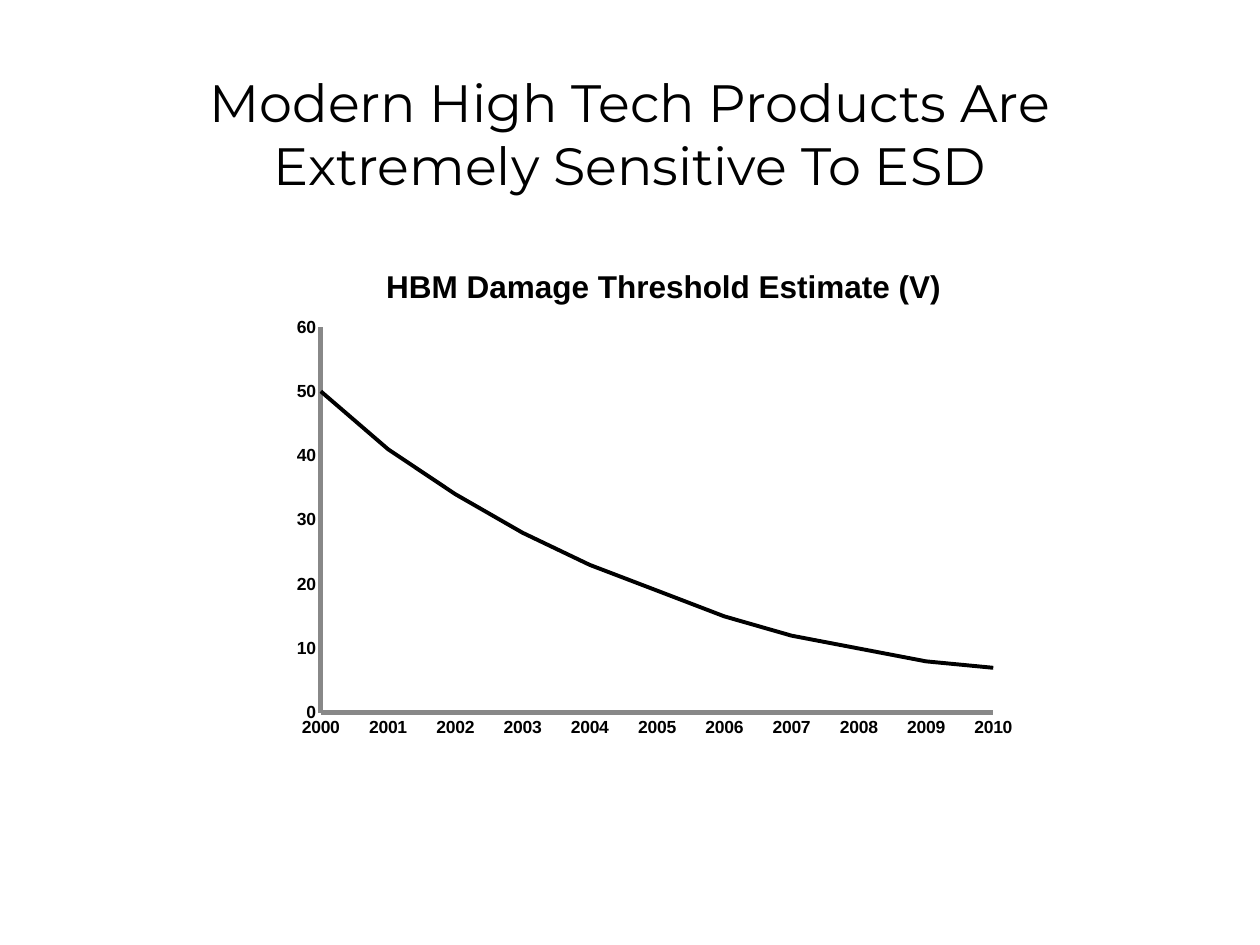
from lxml.etree import fromstring
from pptx import Presentation
from pptx.chart.data import XyChartData
from pptx.dml.color import RGBColor
from pptx.enum.chart import XL_CHART_TYPE, XL_MARKER_STYLE, XL_TICK_MARK
from pptx.enum.text import MSO_ANCHOR, PP_ALIGN
from pptx.util import Pt

HUES = {"ink": "000000", "axis": "888888"}
FACES = {"head": "Montserrat", "chart": "Arial"}
SPACE = "http://schemas.openxmlformats.org/drawingml/2006/chart"


def hue(name):
    return RGBColor.from_string(HUES[name])


def style(font, size, face, bold=False, color="ink"):
    font.size, font.name, font.bold = Pt(size), FACES[face], bold
    font.color.rgb = hue(color)


def write(frame, text, size=18, face="chart", bold=False, align=PP_ALIGN.CENTER):
    para = frame.paragraphs[0]
    para.alignment = align
    run = para.add_run()
    run.text = text
    style(run.font, size, face, bold)


def layout(inner=False, **parts):
    """Make a manual chart layout from fractions of the chart area."""
    tags = '<c:layoutTarget val="inner"/>' if inner else ""
    tags += '<c:xMode val="edge"/><c:yMode val="edge"/>'
    tags += "".join(f'<c:{key} val="{val}"/>' for key, val in parts.items())
    return fromstring(f'<c:layout xmlns:c="{SPACE}"><c:manualLayout>{tags}'
                      "</c:manualLayout></c:layout>")


def place(node, new, spot):
    for old in node.findall(f"{{{SPACE}}}layout"):
        node.remove(old)
    node.insert(spot, new)


class Deck:
    def __init__(self, wide, high):
        self.show = Presentation()
        self.show.slide_width, self.show.slide_height = Pt(wide), Pt(high)
        self.slide = self.show.slides.add_slide(self.show.slide_layouts[6])

    def text(self, box, text, **form):
        frame = self.slide.shapes.add_textbox(*map(Pt, box)).text_frame
        frame.word_wrap = True
        frame.vertical_anchor = MSO_ANCHOR.MIDDLE
        write(frame, text, **form)

    def axis(self, axis, low, high, step):
        axis.minimum_scale, axis.maximum_scale = low, high
        axis.major_unit = step
        axis.has_major_gridlines = False
        axis.major_tick_mark = axis.minor_tick_mark = XL_TICK_MARK.NONE
        axis.format.line.color.rgb = hue("axis")
        axis.format.line.width = Pt(3)
        labels = axis.tick_labels
        labels.number_format, labels.number_format_is_linked = "0", False
        style(labels.font, 10, "chart", bold=True)

    def curve(self, box, title, years, volts):
        data = XyChartData()
        line = data.add_series("Series 1")
        for year, volt in zip(years, volts):
            line.add_data_point(year, volt)
        kind = XL_CHART_TYPE.XY_SCATTER_SMOOTH_NO_MARKERS
        chart = self.slide.shapes.add_chart(kind, *map(Pt, box), data).chart
        style(chart.font, 10, "chart")
        chart.has_legend = False

        # Title and plot area
        chart.has_title = True
        write(chart.chart_title.text_frame, title, size=18, bold=True)
        chart.chart_title.include_in_layout = False
        place(chart.chart_title._element, layout(x=0.13, y=0.05), 1)
        area = chart._chartSpace.chart.plotArea
        place(area, layout(inner=True, x=0.05, y=0.18, w=0.9, h=0.75), 0)

        # Axes
        self.axis(chart.category_axis, years[0], years[-1], 1)
        self.axis(chart.value_axis, 0, 60, 10)

        # Series
        chart.plots[0].vary_by_categories = False
        series = chart.plots[0].series[0]
        series.smooth = True
        series.marker.style = XL_MARKER_STYLE.NONE
        series.format.line.color.rgb = hue("ink")
        series.format.line.width = Pt(2.25)


def main():
    deck = Deck(720, 540)
    # Heading
    deck.text((36, 31, 648, 90),
              "Modern High Tech Products Are Extremely Sensitive To ESD",
              size=30, face="head")
    # Damage threshold by year
    deck.curve((162, 134, 427, 294), "HBM Damage Threshold Estimate (V)",
               range(2000, 2011), (50, 41, 34, 28, 23, 19, 15, 12, 10, 8, 7))
    deck.show.save("out.pptx")


if __name__ == "__main__":
    main()
